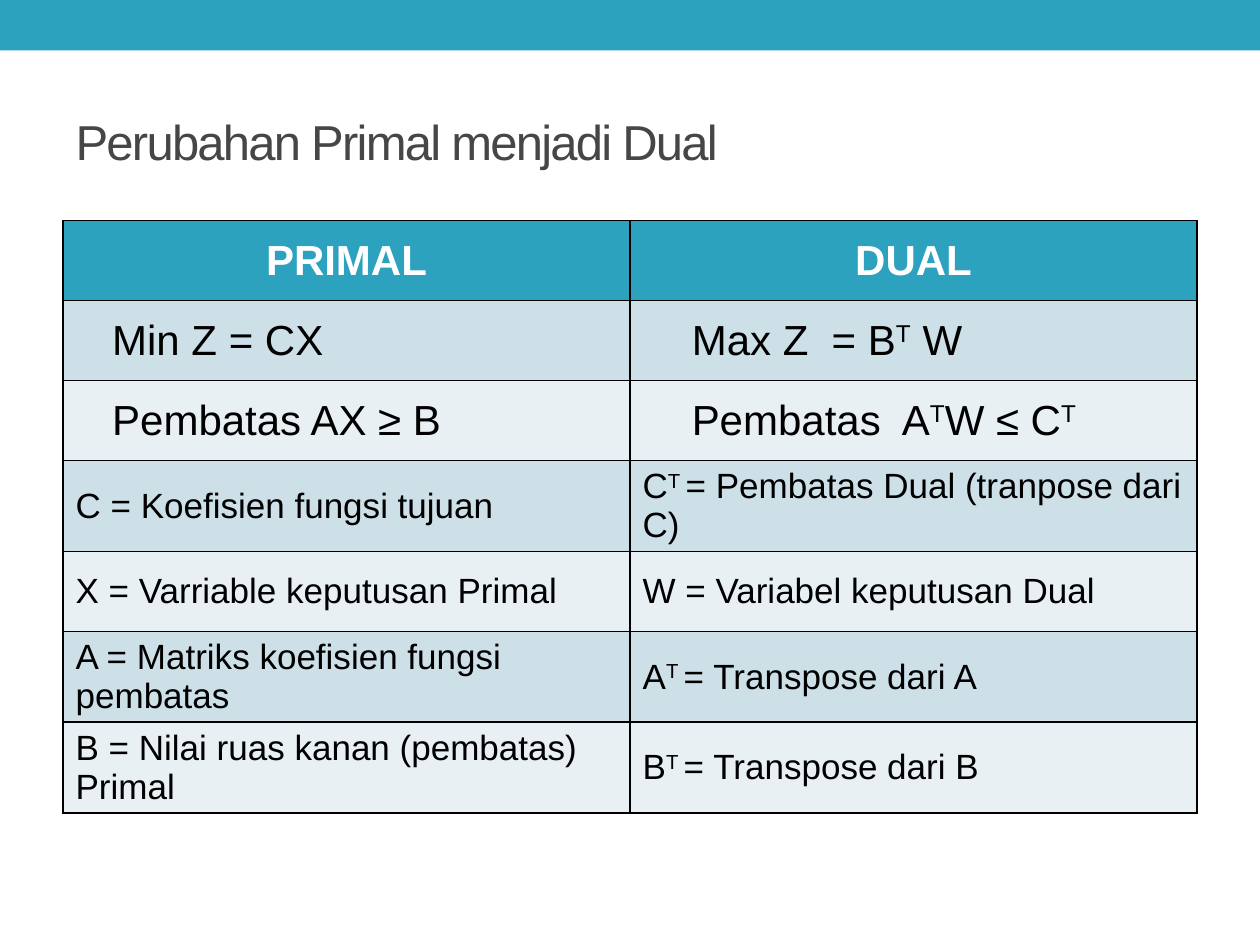
from dataclasses import dataclass

from lxml import etree
from pptx import Presentation
from pptx.dml.color import RGBColor
from pptx.enum.shapes import MSO_SHAPE
from pptx.enum.text import MSO_ANCHOR, PP_ALIGN
from pptx.oxml.ns import qn
from pptx.util import Inches, Pt

RECT = MSO_SHAPE.RECTANGLE
MIDDLE = MSO_ANCHOR.MIDDLE
LEFT = PP_ALIGN.LEFT
CENTER = PP_ALIGN.CENTER
SIDES = ("a:lnL", "a:lnR", "a:lnT", "a:lnB")


@dataclass(frozen=True)
class Theme:
    font: str = "Arial"
    teal: str = "2DA2BF"
    gray: str = "464646"
    white: str = "FFFFFF"
    black: str = "000000"
    bands: tuple = ("CDE0E8", "E8F0F4")
    title: int = 28
    large: int = 24
    small: int = 20
    border: int = 1


HEAD = ("PRIMAL", "DUAL")
MODEL = (
    ("Min Z = CX", "Max Z  = B^T^ W"),
    ("Pembatas AX ≥ B", "Pembatas  A^T^W ≤ C^T"),
)
TERMS = (
    ("C = Koefisien fungsi tujuan", "C^T ^= Pembatas Dual (tranpose dari C)"),
    ("X = Varriable keputusan Primal", "W = Variabel keputusan Dual"),
    ("A = Matriks koefisien fungsi pembatas", "A^T ^= Transpose dari A"),
    ("B = Nilai ruas kanan (pembatas) Primal", "B^T ^= Transpose dari B"),
)
INDENTS = (0.29, 0.39)


class Deck:
    def __init__(self, theme):
        self.theme = theme
        self.file = Presentation()
        self.file.slide_width = Inches(10)
        self.file.slide_height = Inches(7.5)
        self.slide = self.file.slides.add_slide(self.file.slide_layouts[5])

    def text(self, para, text, size, color, bold=False):
        for i, part in enumerate(text.split("^")):
            if not part:
                continue
            run = para.add_run()
            run.text = part
            font = run.font
            font.name = self.theme.font
            font.size = Pt(size)
            font.bold = bold
            font.color.rgb = RGBColor.from_string(color)
            if i % 2:
                font._element.set("baseline", "30000")

    def bar(self, left, top, width, height):
        box = self.slide.shapes.add_shape(
            RECT, Inches(left), Inches(top), Inches(width), Inches(height))
        box.shadow.inherit = False
        box.fill.solid()
        box.fill.fore_color.rgb = RGBColor.from_string(self.theme.teal)
        box.line.fill.background()

    def title(self, text, left, top, width, height):
        box = self.slide.shapes.title
        box.left, box.top = Inches(left), Inches(top)
        box.width, box.height = Inches(width), Inches(height)
        box.text_frame.vertical_anchor = MIDDLE
        para = box.text_frame.paragraphs[0]
        para.alignment = LEFT
        self.text(para, text, self.theme.title, self.theme.gray)
        for run in para.runs:
            run.font._element.set("spc", "-100")

    def edge(self, cell):
        props = cell._tc.get_or_add_tcPr()
        for i, side in enumerate(SIDES):
            line = etree.Element(qn(side), w=str(Pt(self.theme.border)))
            fill = etree.SubElement(line, qn("a:solidFill"))
            etree.SubElement(fill, qn("a:srgbClr"), val=self.theme.black)
            props.insert(i, line)

    def cell(self, cell, text, fill, size, color, bold=False,
             align=LEFT, indent=0):
        cell.vertical_anchor = MIDDLE
        cell.fill.solid()
        cell.fill.fore_color.rgb = RGBColor.from_string(fill)
        self.edge(cell)
        para = cell.text_frame.paragraphs[0]
        para.alignment = align
        if indent:
            para._p.get_or_add_pPr().set("marL", str(Inches(indent)))
        self.text(para, text, size, color, bold)

    def table(self, left, top, width, height):
        look = self.theme
        body = MODEL + TERMS
        grid = self.slide.shapes.add_table(
            len(body) + 1, len(HEAD), Inches(left), Inches(top),
            Inches(width), Inches(height)).table
        for col, text in enumerate(HEAD):
            self.cell(grid.cell(0, col), text, look.teal, look.large,
                      look.white, True, CENTER)
        for row, texts in enumerate(body):
            model = row < len(MODEL)
            size = look.large if model else look.small
            for col, text in enumerate(texts):
                self.cell(grid.cell(row + 1, col), text, look.bands[row % 2],
                          size, look.black,
                          indent=INDENTS[col] if model else 0)

    def save(self):
        self.file.save("out.pptx")


def main():
    deck = Deck(Theme())
    deck.bar(0, 0, 10, 0.4)
    deck.title("Perubahan Primal menjadi Dual", 0.5, 0.58, 9, 1.08)
    deck.table(0.5, 1.75, 9, 4.45)
    deck.save()


if __name__ == "__main__":
    main()
